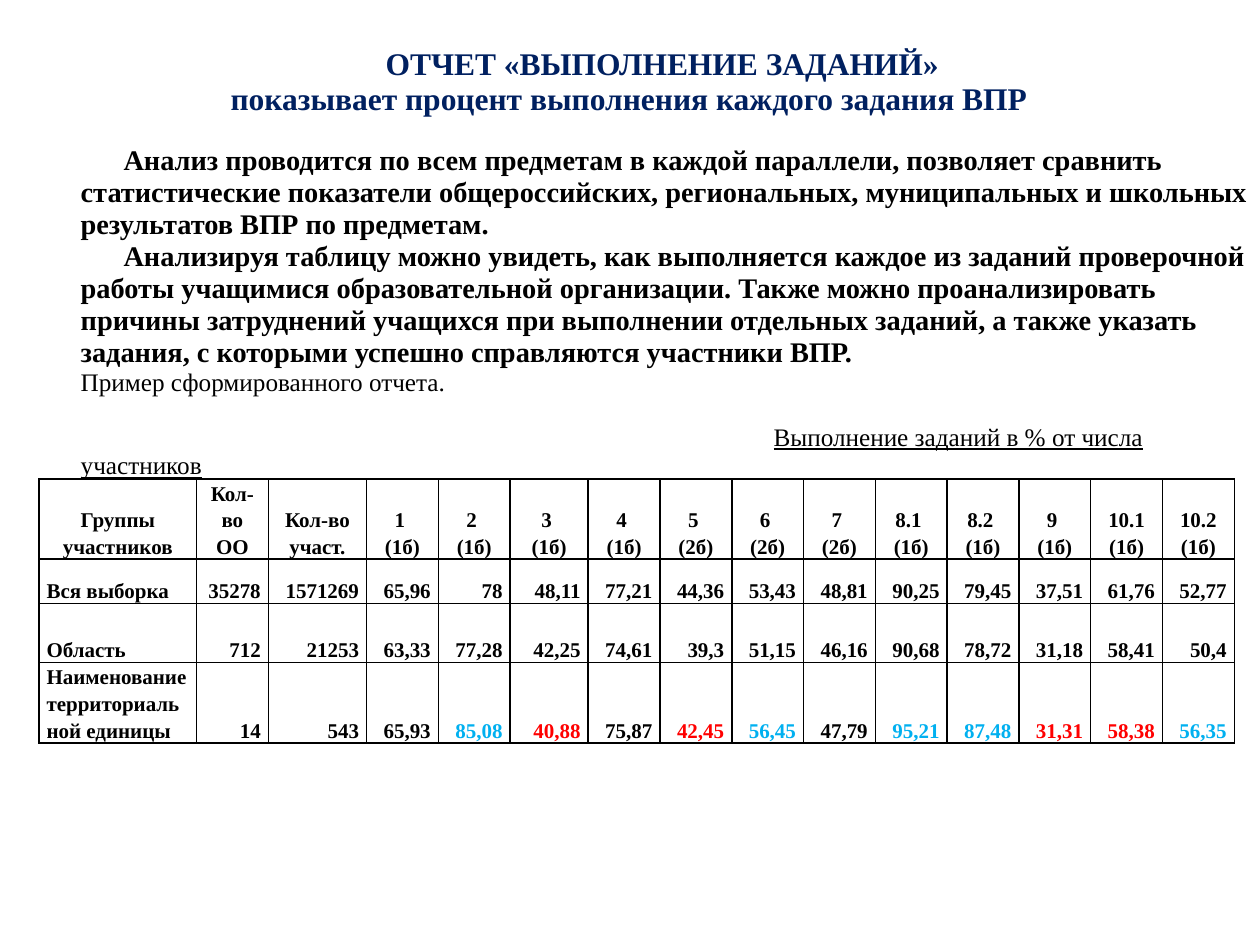
from lxml import etree
from pptx import Presentation
from pptx import util as u
from pptx.dml.color import RGBColor
from pptx.enum import text
from pptx.oxml import ns

NAVY = RGBColor(0x00, 0x20, 0x60)
BLACK = RGBColor(0x00, 0x00, 0x00)
RED = RGBColor(0xFF, 0x00, 0x00)
BLUE = RGBColor(0x00, 0xB0, 0xF0)

TITLE = [
    ("ОТЧЕТ «ВЫПОЛНЕНИЕ ЗАДАНИЙ»", dict(indent=2.42)),
    ("показывает процент выполнения каждого задания ВПР", dict(indent=1.19)),
]
BODY = [
    ("Анализ проводится по всем предметам в каждой параллели, позволяет сравнить "
     "статистические показатели общероссийских, региональных, муниципальных и школьных "
     "результатов ВПР по предметам.", dict(indent=0.34)),
    ("Анализируя таблицу можно увидеть, как выполняется каждое из заданий проверочной "
     "работы учащимися образовательной организации. Также можно проанализировать "
     "причины затруднений учащихся при выполнении отдельных заданий, а также указать "
     "задания, с которыми успешно справляются участники ВПР.", dict(indent=0.34)),
    ("Пример сформированного отчета.", dict(size=14.4, bold=False)),
    ("Выполнение заданий в % от числа участников",
     dict(size=14.4, bold=False, underline=True, indent=5.5, before=15)),
]

# Task number and its maximum score
TASKS = [("1", 1), ("2", 1), ("3", 1), ("4", 1), ("5", 2), ("6", 2), ("7", 2),
         ("8.1", 1), ("8.2", 1), ("9", 1), ("10.1", 1), ("10.2", 1)]
HEADER = ["Группы участников", "Кол-во ОО", "Кол-во участ."]
HEADER += [f"{task} (1б)" if task.startswith("10") else f"{task} \n({score}б)"
           for task, score in TASKS]
GROUPS = [
    ["Вся выборка", "35278", "1571269", "65,96", "78", "48,11", "77,21", "44,36",
     "53,43", "48,81", "90,25", "79,45", "37,51", "61,76", "52,77"],
    ["Область", "712", "21253", "63,33", "77,28", "42,25", "74,61", "39,3",
     "51,15", "46,16", "90,68", "78,72", "31,18", "58,41", "50,4"],
    ["Наименование территориальной единицы", "14", "543", "65,93", "85,08", "40,88",
     "75,87", "42,45", "56,45", "47,79", "95,21", "87,48", "31,31", "58,38", "56,35"],
]
HIGHLIGHTS = {"85,08": BLUE, "56,45": BLUE, "95,21": BLUE, "87,48": BLUE, "56,35": BLUE,
              "40,88": RED, "42,45": RED, "31,31": RED, "58,38": RED}
COLUMN_WIDTHS = [1.25, 0.57, 0.78, 0.57, 0.57, 0.62] + [0.57] * 9
ROW_HEIGHTS = [0.5, 0.35, 0.47, 0.5]


def write_paragraph(paragraph, content, *, font, size, color=BLACK, bold=True,
                    underline=False, align=text.PP_ALIGN.LEFT, spacing=1.0,
                    indent=0, before=0):
    paragraph.alignment = align
    paragraph.line_spacing = spacing
    paragraph.space_before = u.Pt(before)
    properties = paragraph._p.get_or_add_pPr()
    properties.set("marL", "0")
    properties.set("indent", str(u.Inches(indent)))
    run = paragraph.add_run()
    run.text = content
    run.font.name = font
    run.font.size = u.Pt(size)
    run.font.bold = bold
    run.font.underline = underline
    run.font.color.rgb = color


class ReportSlide:
    font = "Times New Roman"
    text_spacing = 0.94
    table_spacing = 1.15

    def __init__(self, presentation):
        self.slide = presentation.slides.add_slide(presentation.slide_layouts[0])

    def fill_placeholder(self, index, box, paragraphs, size, color):
        shape = self.slide.placeholders[index]
        shape.left, shape.top, shape.width, shape.height = map(u.Inches, box)
        frame = shape.text_frame
        frame.word_wrap = True
        frame.auto_size = text.MSO_AUTO_SIZE.NONE
        frame.vertical_anchor = text.MSO_ANCHOR.TOP
        frame.margin_left = u.Inches(0.09)
        frame.margin_right = u.Inches(0.05)
        frame.margin_top = frame.margin_bottom = 0
        for number, (content, options) in enumerate(paragraphs):
            paragraph = frame.add_paragraph() if number else frame.paragraphs[0]
            style = dict(font=self.font, size=size, color=color,
                         spacing=self.text_spacing)
            write_paragraph(paragraph, content, **(style | options))

    def add_table(self, left, top, rows):
        frame = self.slide.shapes.add_table(
            len(rows), len(rows[0]), u.Inches(left), u.Inches(top),
            u.Inches(sum(COLUMN_WIDTHS)), u.Inches(sum(ROW_HEIGHTS)))
        table = frame.table
        table.first_row = table.horz_banding = False
        for column, width in zip(table.columns, COLUMN_WIDTHS):
            column.width = u.Inches(width)
        for row, height in zip(table.rows, ROW_HEIGHTS):
            row.height = u.Inches(height)
        for row_index, row in enumerate(rows):
            for column_index, content in enumerate(row):
                if row_index == 0:
                    align = text.PP_ALIGN.CENTER
                elif column_index == 0:
                    align = text.PP_ALIGN.LEFT
                else:
                    align = text.PP_ALIGN.RIGHT
                self.fill_cell(table.cell(row_index, column_index), content, align)

    def fill_cell(self, cell, content, align):
        cell.fill.background()
        cell.vertical_anchor = text.MSO_ANCHOR.BOTTOM
        cell.margin_left = cell.margin_right = u.Inches(0.06)
        cell.margin_top = cell.margin_bottom = 0
        frame = cell.text_frame
        for number, line in enumerate(content.split("\n")):
            paragraph = frame.add_paragraph() if number else frame.paragraphs[0]
            write_paragraph(paragraph, line, font=self.font, size=12, align=align,
                            color=HIGHLIGHTS.get(line, BLACK),
                            spacing=self.table_spacing)
        self.add_borders(cell)

    def add_borders(self, cell):
        properties = cell._tc.get_or_add_tcPr()
        for position, side in enumerate(("a:lnL", "a:lnR", "a:lnT", "a:lnB")):
            line = etree.Element(ns.qn(side), w=str(u.Pt(1)))
            fill = etree.SubElement(line, ns.qn("a:solidFill"))
            etree.SubElement(fill, ns.qn("a:srgbClr"), val=str(BLACK))
            properties.insert(position, line)


def main():
    presentation = Presentation()
    presentation.slide_width = u.Inches(10)
    presentation.slide_height = u.Inches(7.5)
    report = ReportSlide(presentation)

    # Title and explanation
    report.fill_placeholder(0, (0.55, 0.37, 9.45, 0.6), TITLE, 18, NAVY)
    report.fill_placeholder(1, (0.55, 1.15, 9.45, 2.6), BODY, 16.2, BLACK)

    # Results by group of participants
    report.add_table(0.31, 3.8, [HEADER] + GROUPS)

    presentation.save("out.pptx")


if __name__ == "__main__":
    main()
